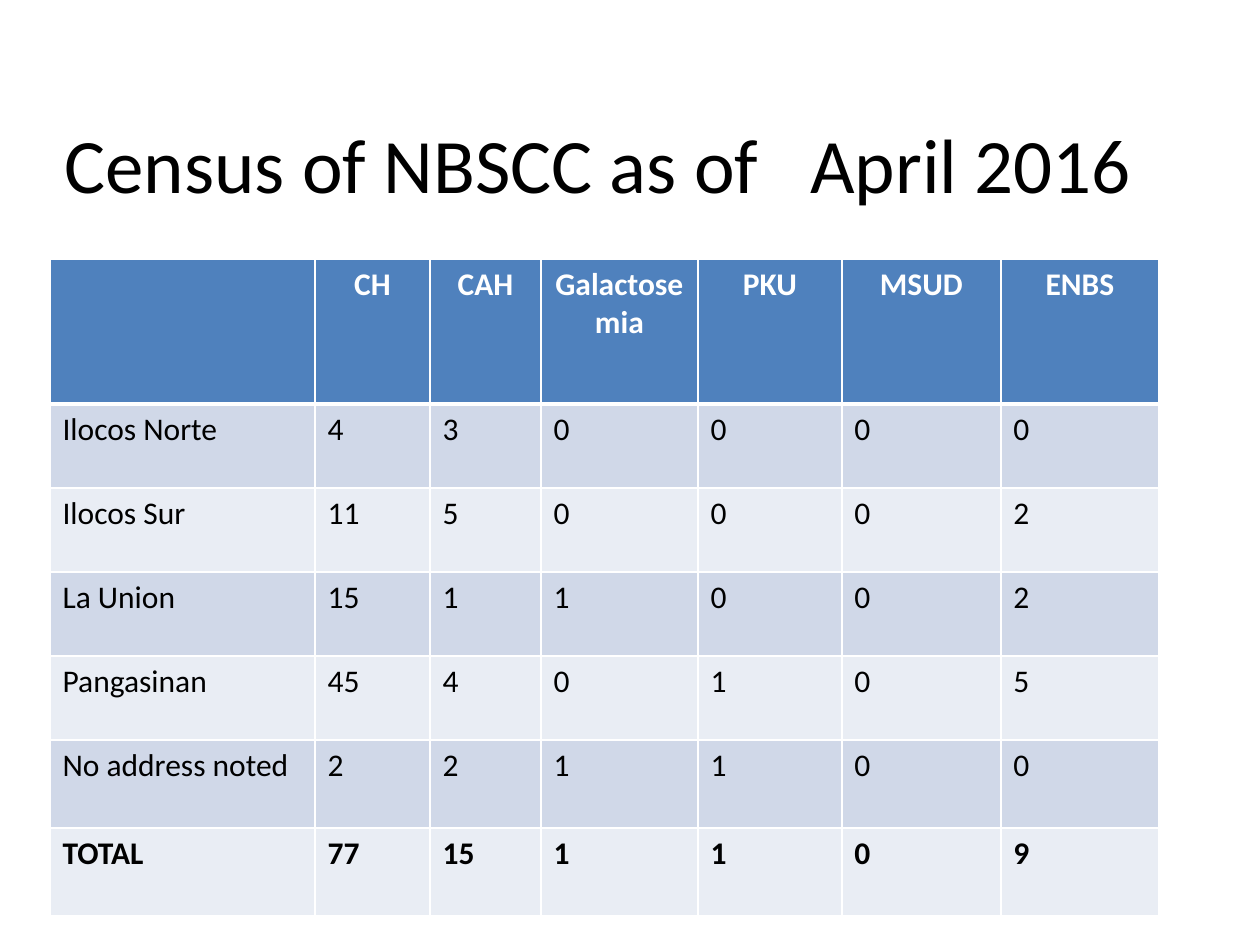
from lxml.etree import SubElement
from pptx import Presentation
from pptx.dml.color import RGBColor
from pptx.enum.text import MSO_ANCHOR, PP_ALIGN
from pptx.oxml.ns import qn
from pptx.util import Inches, Pt

PX = Inches(1) / 126
WHITE = RGBColor(0xFF, 0xFF, 0xFF)
BLACK = RGBColor(0x00, 0x00, 0x00)
HEADER_BLUE = RGBColor(0x4F, 0x81, 0xBD)
BANDS = [RGBColor(0xE9, 0xED, 0xF4), RGBColor(0xD0, 0xD8, 0xE8)]
FONT = "Calibri"

CENSUS = [
    ["", "CH", "CAH", "Galactosemia", "PKU", "MSUD", "ENBS"],
    ["Ilocos Norte", 4, 3, 0, 0, 0, 0],
    ["Ilocos Sur", 11, 5, 0, 0, 0, 2],
    ["La Union", 15, 1, 1, 0, 0, 2],
    ["Pangasinan", 45, 4, 0, 1, 0, 5],
    ["No address noted", 2, 2, 1, 1, 0, 0],
    ["TOTAL", 77, 15, 1, 1, 0, 9],
]
COLUMN_WIDTHS = [265, 115, 111, 157, 144, 159, 158]
ROW_HEIGHTS = [145, 84, 84, 84, 84, 88, 88]
TOTAL_ROW = len(CENSUS) - 1


def px(count):
    return round(count * PX)


def add_borders(cell, widths):
    """Draw white cell borders; widths maps a side (L, R, T, B) to points."""
    properties = cell._tc.get_or_add_tcPr()
    for side, points in widths.items():
        line = SubElement(properties, qn(f"a:ln{side}"), w=str(Pt(points)))
        fill = SubElement(line, qn("a:solidFill"))
        SubElement(fill, qn("a:srgbClr"), val=str(WHITE))


prs = Presentation()
prs.slide_width, prs.slide_height = Inches(10), Inches(7.5)
slide = prs.slides.add_slide(prs.slide_layouts[5])

title = slide.shapes.title
title.left, title.top, title.width, title.height = px(49), px(66), px(1099), px(193)
title.text_frame.text = "Census of NBSCC as of   April 2016"
title.text_frame.vertical_anchor = MSO_ANCHOR.MIDDLE
heading = title.text_frame.paragraphs[0]
heading.alignment = PP_ALIGN.CENTER
heading.runs[0].font.size = Pt(44)
heading.runs[0].font.name = FONT
heading.runs[0].font.color.rgb = BLACK

table = slide.shapes.add_table(
    len(CENSUS), len(COLUMN_WIDTHS), px(50), px(259),
    px(sum(COLUMN_WIDTHS)), px(sum(ROW_HEIGHTS)),
).table
for column, width in zip(table.columns, COLUMN_WIDTHS):
    column.width = px(width)
for row, height in zip(table.rows, ROW_HEIGHTS):
    row.height = px(height)

for r, record in enumerate(CENSUS):
    is_header = r == 0
    for c, value in enumerate(record):
        cell = table.cell(r, c)
        add_borders(cell, {"L": 1, "R": 1, "T": 3 if r == 1 else 1, "B": 3 if is_header else 1})
        cell.fill.solid()
        cell.fill.fore_color.rgb = HEADER_BLUE if is_header else BANDS[r % 2]
        cell.text_frame.text = str(value)
        paragraph = cell.text_frame.paragraphs[0]
        paragraph.alignment = PP_ALIGN.CENTER if is_header else PP_ALIGN.LEFT
        for run in paragraph.runs:
            run.font.name = FONT
            run.font.size = Pt(18)
            run.font.bold = r in (0, TOTAL_ROW)
            run.font.color.rgb = WHITE if is_header else BLACK

prs.save("out.pptx")
